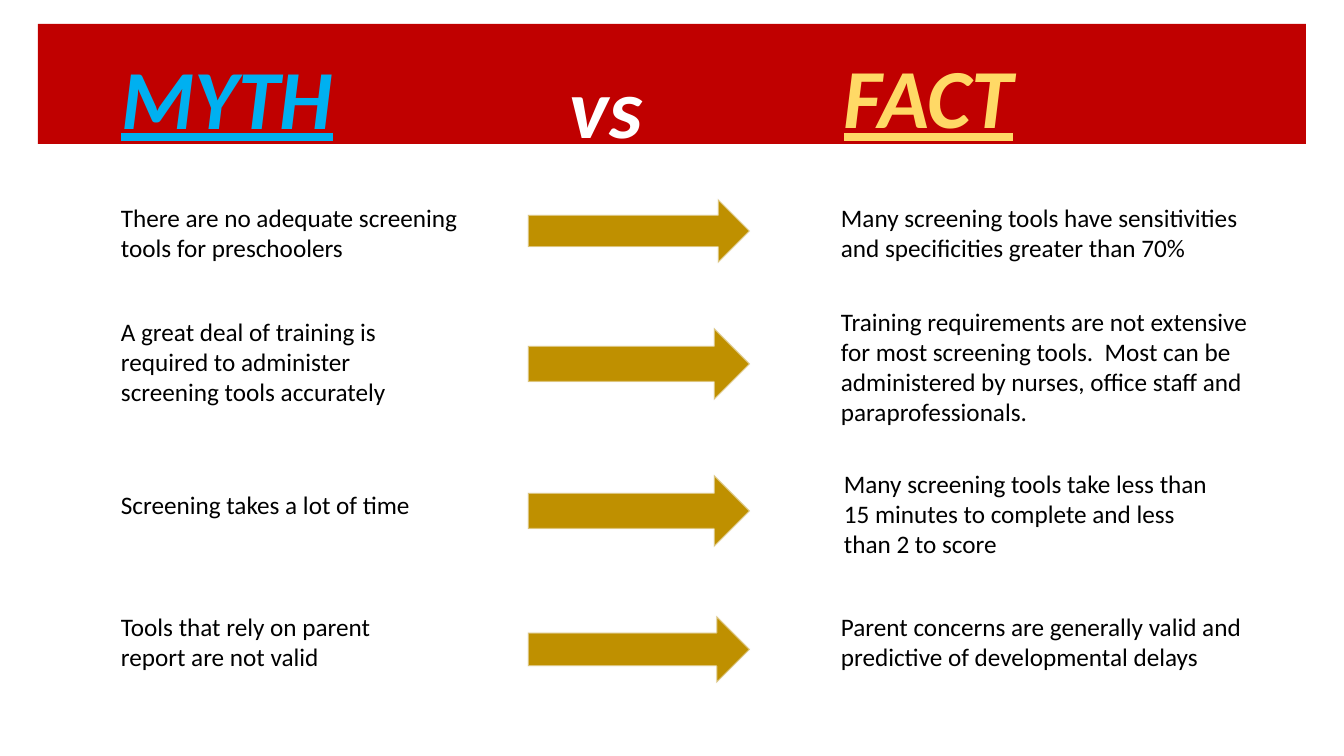
import pptx
import pptx.dml.color
import pptx.enum.shapes
import pptx.enum.text
import pptx.oxml
import pptx.oxml.ns
import pptx.util

RGBColor = pptx.dml.color.RGBColor
Shapes = pptx.enum.shapes.MSO_SHAPE

PX = 914400 / 100.8
RED = RGBColor(0xC0, 0x00, 0x00)
BLUE = RGBColor(0x00, 0xB0, 0xF0)
YELLOW = RGBColor(0xFF, 0xD9, 0x66)
GOLD = RGBColor(0xBF, 0x90, 0x00)
PALE = RGBColor(0xF9, 0xF9, 0xF9)
WHITE = RGBColor(0xFF, 0xFF, 0xFF)
BLACK = RGBColor(0x00, 0x00, 0x00)

MYTH_X, ARROW_X, FACT_X = 111, 528, 831
ARROW_WIDTH = 222

# Row top; then myth, arrow and fact, placed from that top.
# Myth: text, drop, width, height. Arrow: drop, height.
# Fact: text, indent, drop, width, height.
ROWS = [
    (197,
     ("There are no adequate screening tools for preschoolers", 0, 361, 102),
     (2, 64),
     ("Many screening tools have sensitivities and specificities greater "
      "than 70%", 0, 0, 453, 102)),
    (301,
     ("A great deal of training is required to administer screening tools "
      "accurately", 10, 338, 102),
     (27, 72),
     ("Training requirements are not extensive for most screening tools.  "
      "Most can be administered by nurses, office staff and "
      "paraprofessionals.", 0, 0, 453, 163)),
    (463,
     ("Screening takes a lot of time", 21, 426, 40),
     (12, 72),
     ("Many screening tools take less than 15 minutes to complete and less "
      "than 2 to score", 3, 0, 400, 102)),
    (606,
     ("Tools that rely on parent report are not valid", 0, 322, 72),
     (10, 67),
     ("Parent concerns are generally valid and predictive of developmental "
      "delays", 0, 0, 431, 72)),
]


def emu(*lengths):
    return [pptx.util.Emu(round(length * PX)) for length in lengths]


def write(box, text, size, color):
    frame = box.text_frame
    frame.word_wrap = True
    frame.auto_size = pptx.enum.text.MSO_AUTO_SIZE.NONE
    frame.vertical_anchor = pptx.enum.text.MSO_ANCHOR.TOP
    frame.text = text
    paragraph = frame.paragraphs[0]
    paragraph.alignment = pptx.enum.text.PP_ALIGN.LEFT
    paragraph.font.name = "Calibri"
    paragraph.font.size = pptx.util.Pt(size)
    paragraph.font.color.rgb = color
    return paragraph


def add_label(slide, x, y, width, height, text):
    box = slide.shapes.add_textbox(*emu(x, y, width, height))
    write(box, text, 18, BLACK)


def add_solid(slide, preset, x, y, width, height, color):
    solid = slide.shapes.add_shape(preset, *emu(x, y, width, height))
    solid.shadow.inherit = False
    solid.fill.solid()
    solid.fill.fore_color.rgb = color
    return solid


def add_arrow(slide, x, y, width, height):
    arrow = add_solid(slide, Shapes.RIGHT_ARROW, x, y, width, height, GOLD)
    arrow.line.color.rgb = PALE
    arrow.line.width = pptx.util.Pt(1.35)
    # Half-transparent outline
    outline = arrow.line.fill._xPr.find(".//" + pptx.oxml.ns.qn("a:srgbClr"))
    outline.append(pptx.oxml.parse_xml(
        "<a:alpha %s val='50000'/>" % pptx.oxml.ns.nsdecls("a")))


def add_header(slide, x, y, width, height):
    band = add_solid(slide, Shapes.RECTANGLE, x, y, width, height, RED)
    band.line.fill.background()

    # The title stands in front of the band
    myth = slide.shapes.title
    band._element.addnext(myth._element)
    myth.left, myth.top, myth.width, myth.height = emu(x + 73, y + 16, 291, 112)
    fact = slide.shapes.add_textbox(*emu(x + 796, y + 16, 254, 112))
    versus = slide.shapes.add_textbox(*emu(x + 522, y + 26, 118, 112))

    for box, text, color, underline in (
            (myth, "MYTH", BLUE, True),
            (fact, "FACT", YELLOW, True),
            (versus, "vs", WHITE, False)):
        font = write(box, text, 60, color).font
        font.bold = font.italic = True
        font.underline = underline


def add_row(slide, top, myth, arrow, fact):
    text, drop, width, height = myth
    add_label(slide, MYTH_X, top + drop, width, height, text)
    drop, height = arrow
    add_arrow(slide, ARROW_X, top + drop, ARROW_WIDTH, height)
    text, indent, drop, width, height = fact
    add_label(slide, FACT_X + indent, top + drop, width, height, text)


def main():
    deck = pptx.Presentation()
    deck.slide_width, deck.slide_height = emu(1344, 756)
    slide = deck.slides.add_slide(deck.slide_layouts.get_by_name("Title Only"))
    add_header(slide, 38, 24, 1268, 120)
    for row in ROWS:
        add_row(slide, *row)
    deck.save("out.pptx")


if __name__ == "__main__":
    main()
